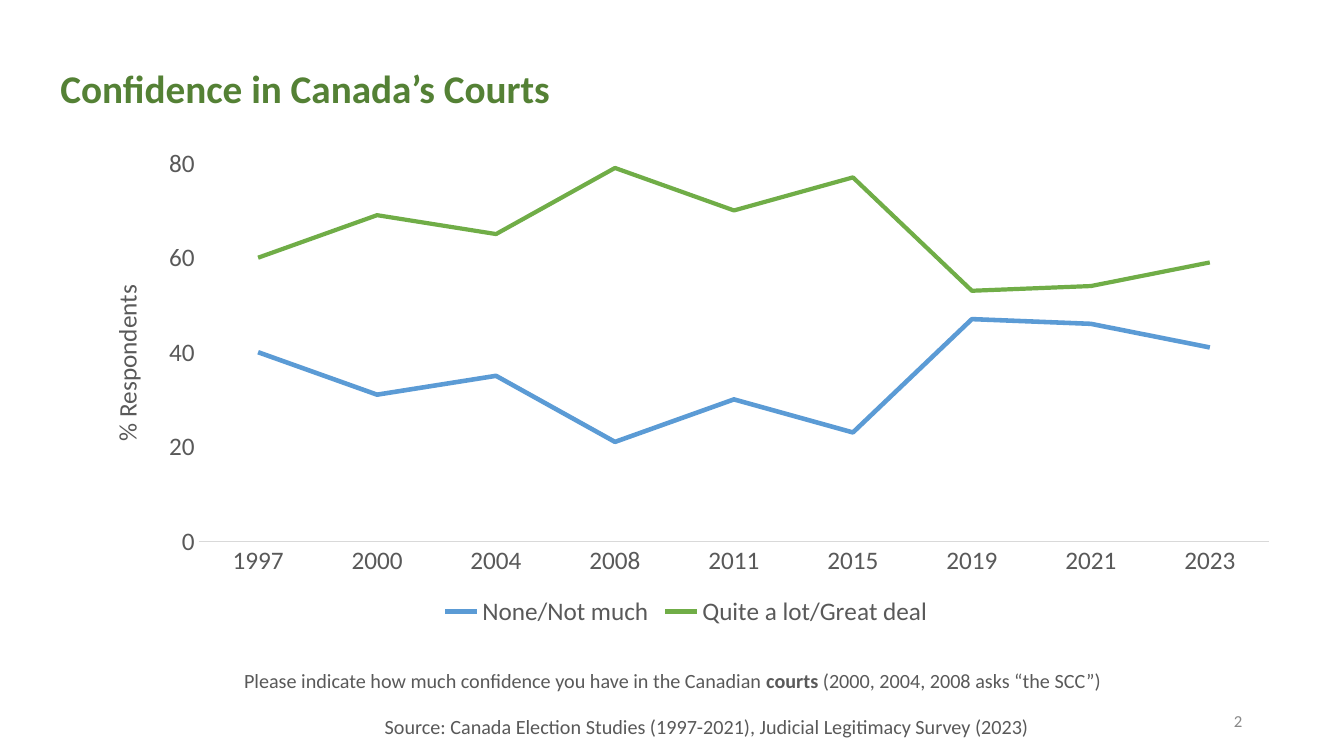
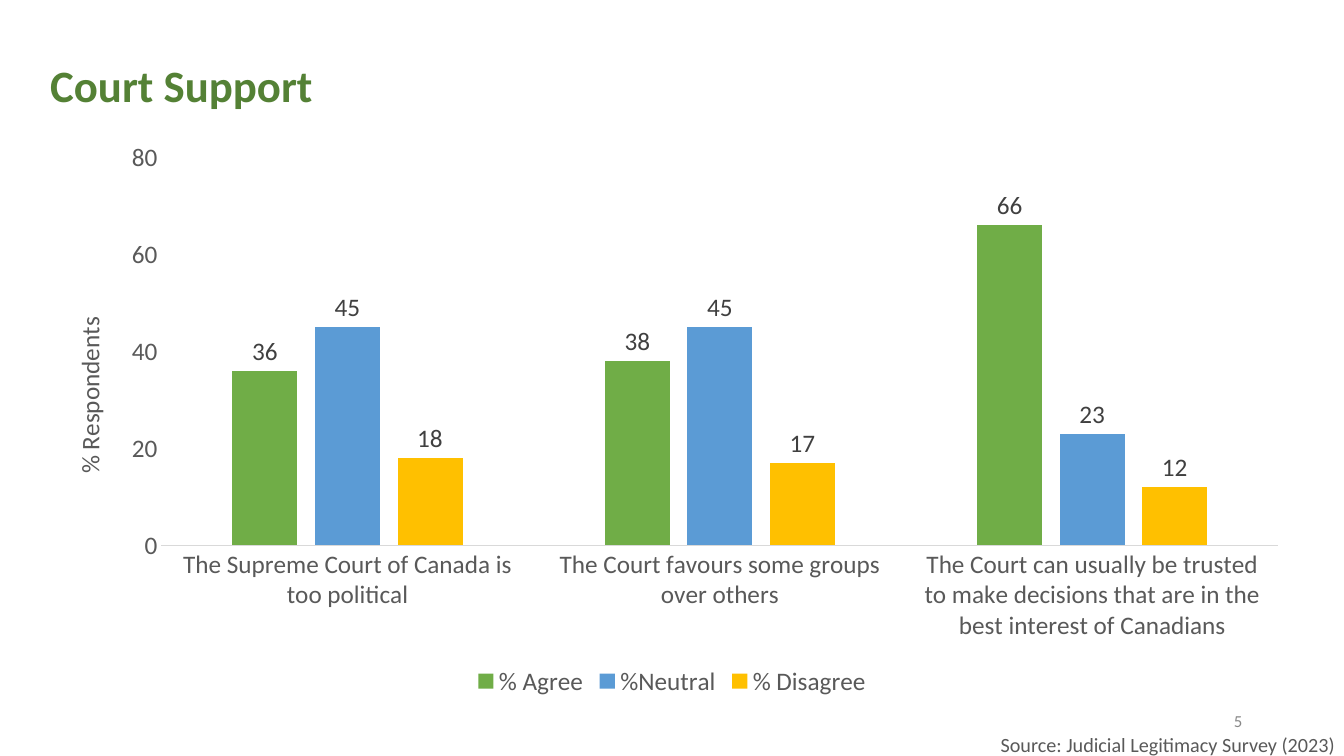
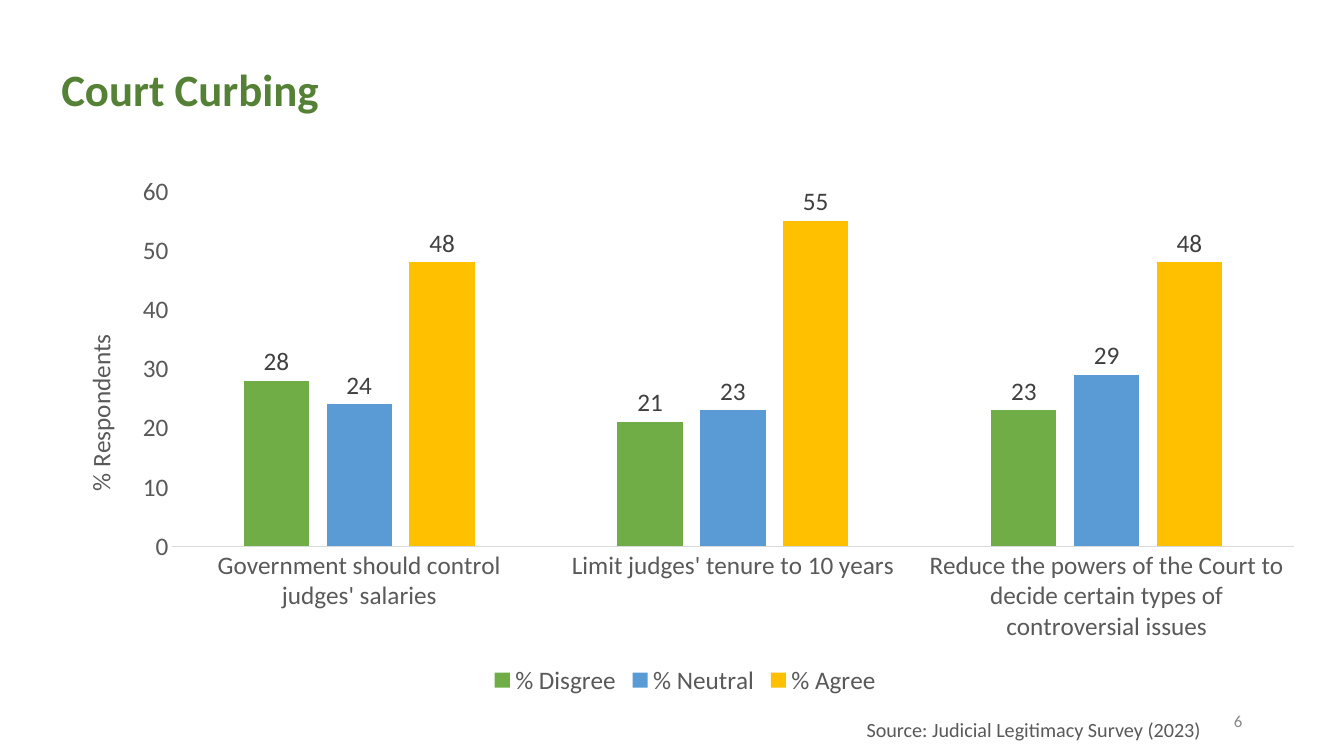
from pptx import Presentation
from pptx.chart.data import CategoryChartData
from pptx.dml.color import RGBColor
from pptx.enum.chart import XL_CHART_TYPE, XL_LABEL_POSITION, XL_LEGEND_POSITION, XL_MARKER_STYLE, XL_TICK_MARK
from pptx.enum.text import MSO_ANCHOR, PP_ALIGN
from pptx.oxml.ns import qn
from pptx.util import Inches, Pt
from lxml import etree

LINE, COLUMN = XL_CHART_TYPE.LINE, XL_CHART_TYPE.COLUMN_CLUSTERED
LEFT, CENTER, RIGHT = PP_ALIGN.LEFT, PP_ALIGN.CENTER, PP_ALIGN.RIGHT
TOP, MIDDLE = MSO_ANCHOR.TOP, MSO_ANCHOR.MIDDLE
NO_TICK = XL_TICK_MARK.NONE
NO_MARKER = XL_MARKER_STYLE.NONE
BOTTOM = XL_LEGEND_POSITION.BOTTOM
OUTSIDE = XL_LABEL_POSITION.OUTSIDE_END

FONT = "Calibri"
TITLE, GRAY, LABEL, NUMBER, AXIS = "548135", "595959", "404040", "888888", "D9D9D9"
GREEN, BLUE, GOLD = "70AD47", "5B9BD5", "FFC000"
PLOT_LEFT, PLOT_TOP, PLOT_RIGHT = 1.2, 0.26, 0.25
AXIS_TITLE_LEFT = 0.27


def rgb(color):
    return RGBColor.from_string(color)


def set_font(font, size, color, bold=False):
    font.name = FONT
    font.size = Pt(size)
    font.bold = bold
    font.color.rgb = rgb(color)


def add_text(s, runs, box, size, color, align=LEFT, anchor=TOP, bold=False):
    sp = s.shapes.add_textbox(*map(Inches, box))
    tf = sp.text_frame
    tf.word_wrap = True
    tf.vertical_anchor = anchor
    p = tf.paragraphs[0]
    p.alignment = align
    set_font(p.font, size, color, bold)
    for text, strong in runs:
        r = p.add_run()
        r.text = text
        if strong:
            r.font.bold = True
    return p


def add_note(s, runs, left, top, width, align=RIGHT):
    add_text(s, runs, (left, top, width, 0.34), 14.4, GRAY, align)


def new_slide(prs, title, left, top, size, number):
    s = prs.slides.add_slide(prs.slide_layouts[6])
    p = add_text(s, [(title, False)], (left, top, 11.5, 1.45), size, TITLE, anchor=MIDDLE, bold=True)
    p.line_spacing = 0.9
    add_text(s, [(str(number), False)], (9.42, 6.95, 3, 0.4), 12, NUMBER, RIGHT, MIDDLE)
    return s


def set_layout(element, **values):
    layout = element.find(qn("c:layout"))
    if layout is None:
        layout = etree.Element(qn("c:layout"))
        element.insert(0, layout)
    manual = etree.SubElement(layout, qn("c:manualLayout"))
    for tag, value in values.items():
        etree.SubElement(manual, qn("c:" + tag)).set("val", str(value))


def style_axes(chart, top, step):
    cat, val = chart.category_axis, chart.value_axis
    for axis in (cat, val):
        axis.has_major_gridlines = False
        axis.major_tick_mark = axis.minor_tick_mark = NO_TICK
        set_font(axis.tick_labels.font, 18, GRAY)
    cat.format.line.color.rgb = rgb(AXIS)
    cat.format.line.width = Pt(0.75)
    val.format.line.fill.background()
    val.minimum_scale, val.maximum_scale, val.major_unit = 0, top, step
    val.tick_labels.number_format = "#,##0"
    val.tick_labels.number_format_is_linked = False


def add_axis_title(axis, text, x, y):
    tf = axis.axis_title.text_frame
    tf.text = text
    set_font(tf.paragraphs[0].font, 18, GRAY)
    title = axis.axis_title._element
    body = title.find(".//" + qn("a:bodyPr"))
    body.set("rot", "-5400000")
    body.set("vert", "horz")
    set_layout(title, xMode="edge", yMode="edge", x=x, y=y)


def add_chart(s, kind, box, cats, series, plot_height, title_top, top, step):
    data = CategoryChartData(number_format="#,##0")
    data.categories = cats
    for name, values, color in series:
        data.add_series(name, values)
    chart = s.shapes.add_chart(kind, *map(Inches, box), data).chart
    width, height = box[2:]
    set_font(chart.font, 18, GRAY)
    chart.has_title = False
    chart.has_legend = True
    chart.legend.position = BOTTOM
    chart.legend.include_in_layout = False
    set_font(chart.legend.font, 18, GRAY)
    style_axes(chart, top, step)
    add_axis_title(chart.value_axis, "% Respondents", AXIS_TITLE_LEFT / width, title_top / height)
    set_layout(chart._chartSpace.find(".//" + qn("c:plotArea")),
               layoutTarget="inner", xMode="edge", yMode="edge",
               x=PLOT_LEFT / width, y=PLOT_TOP / height,
               w=(width - PLOT_LEFT - PLOT_RIGHT) / width, h=plot_height / height)
    chart.plots[0].vary_by_categories = False
    return chart


def add_line_chart(s, box, cats, series, widths, **scale):
    chart = add_chart(s, LINE, box, cats, series, **scale)
    for line, (name, values, color), width in zip(chart.plots[0].series, series, widths):
        line.smooth = False
        line.marker.style = NO_MARKER
        line.format.line.color.rgb = rgb(color)
        line.format.line.width = Pt(width)


def add_column_chart(s, box, cats, series, **scale):
    plot = add_chart(s, COLUMN, box, cats, series, **scale).plots[0]
    plot.gap_width = 219
    plot.overlap = -27
    for column, (name, values, color) in zip(plot.series, series):
        column.format.fill.solid()
        column.format.fill.fore_color.rgb = rgb(color)
        labels = column.data_labels
        labels.show_value = True
        labels.position = OUTSIDE
        labels.number_format = "#,##0"
        labels.number_format_is_linked = False
        set_font(labels.font, 18, LABEL)


def confidence_slide(prs):
    s = new_slide(prs, "Confidence in Canada’s Courts", 0.5, 0.18, 28, 2)
    add_line_chart(
        s, (0.77, 1.36, 12.07, 4.91),
        ["1997", "2000", "2004", "2008", "2011", "2015", "2019", "2021", "2023"],
        [("None/Not much", (40, 31, 35, 21, 30, 23, 47, 46, 41), BLUE),
         ("Quite a lot/Great deal", (60, 69, 65, 79, 70, 77, 53, 54, 59), GREEN)],
        (3.25, 3), plot_height=3.75, title_top=1.42, top=80, step=20)
    add_note(s, [("Please indicate how much confidence you have in the Canadian ", False),
                 ("courts", True), (" (2000, 2004, 2008 asks “the SCC”)", False)],
             1.73, 6.58, 9.88, CENTER)
    add_note(s, [("Source: Canada Election Studies (1997-2021), Judicial Legitimacy Survey (2023)", False)],
             1.99, 7.04, 10.04, CENTER)


def survey_slide(prs, title, title_at, number, source_at, box, cats, series, **scale):
    s = new_slide(prs, title, *title_at, 32, number)
    add_note(s, [("Source: Judicial Legitimacy Survey (2023)", False)], *source_at)
    add_column_chart(s, box, cats, series, **scale)


def main():
    prs = Presentation()
    prs.slide_width, prs.slide_height = Inches(13.33), Inches(7.5)
    confidence_slide(prs)
    survey_slide(
        prs, "Court Support", (0.4, 0.15), 5, (6.56, 7.22, 6.78), (0.4, 1.3, 12.53, 5.66),
        ["The Supreme Court of Canada is too political",
         "The Court favours some groups over others",
         "The Court can usually be trusted to make decisions that are in the best interest of Canadians"],
        [("% Agree", (36, 38, 66), GREEN),
         ("%Neutral", (45, 45, 23), BLUE),
         ("% Disagree", (18, 17, 12), GOLD)],
        plot_height=3.85, title_top=1.8, top=80, step=20)
    survey_slide(
        prs, "Court Curbing", (0.51, 0.19), 6, (5.34, 7.07, 6.67), (0.51, 1.64, 12.57, 5.31),
        ["Government should control judges' salaries",
         "Limit judges' tenure to 10 years",
         "Reduce the powers of the Court to decide certain types of controversial issues"],
        [("% Disgree", (28, 21, 23), GREEN),
         ("% Neutral", (24, 23, 29), BLUE),
         ("% Agree", (48, 55, 48), GOLD)],
        plot_height=3.52, title_top=1.63, top=60, step=10)
    prs.save("out.pptx")


if __name__ == "__main__":
    main()
